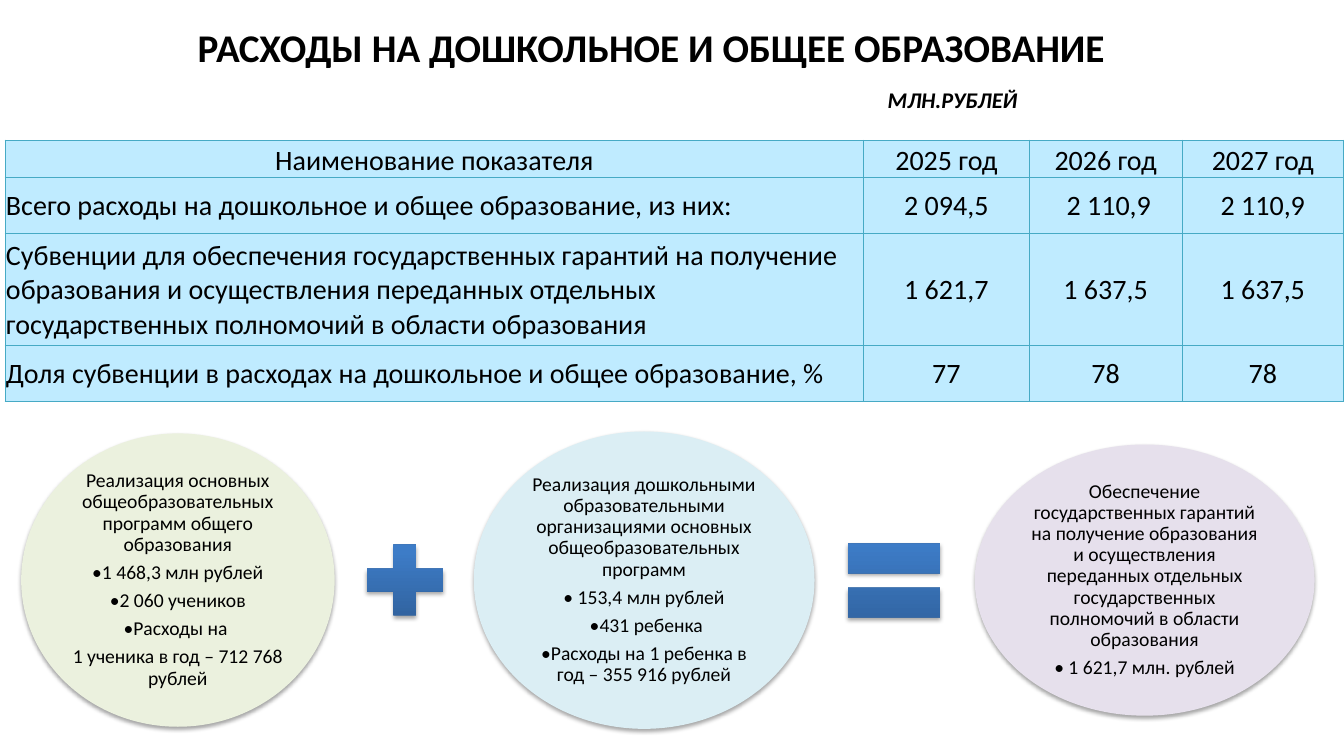
from lxml import etree
from pptx import Presentation
from pptx.dml.color import RGBColor
from pptx.enum.shapes import MSO_SHAPE
from pptx.enum.text import MSO_ANCHOR, MSO_AUTO_SIZE, PP_ALIGN
from pptx.oxml import parse_xml
from pptx.util import Pt

LEFT, CENTER = PP_ALIGN.LEFT, PP_ALIGN.CENTER
MIDDLE, BOTTOM = MSO_ANCHOR.MIDDLE, MSO_ANCHOR.BOTTOM
OVAL, PLUS, EQUAL = MSO_SHAPE.OVAL, MSO_SHAPE.MATH_PLUS, MSO_SHAPE.MATH_EQUAL
NS = "http://schemas.openxmlformats.org/drawingml/2006/main"
FONT = "Calibri"
COLORS = {
    "text": "000000", "cell": "BFEBFF", "border": "46AAC5",
    "green": "EBF1DE", "aqua": "DBEEF4", "lilac": "E6E0EC",
    "sign_dark": "2F5F99", "sign_light": "3D7CC7",
}

TITLE = "РАСХОДЫ НА ДОШКОЛЬНОЕ И ОБЩЕЕ ОБРАЗОВАНИЕ"
UNIT = "МЛН.РУБЛЕЙ"
ROWS = [
    ("Наименование показателя", "2025 год", "2026 год", "2027 год"),
    ("Всего расходы на дошкольное и общее образование, из них:",
     "2 094,5", " 2 110,9", "2 110,9"),
    ("Субвенции для обеспечения государственных гарантий на получение образования "
     "и осуществления переданных отдельных государственных полномочий в области образования",
     "1 621,7", "1 637,5", "1 637,5"),
    ("Доля субвенции в расходах на дошкольное и общее образование, %", "77", "78", "78"),
]
COL_WIDTHS = (613.4, 118.1, 109.4, 115.2)
ROW_HEIGHTS = (27, 40, 80, 40)

# Left, top, width, height, fill, paragraphs
CIRCLES = [
    (15.1, 309.6, 223.9, 209.5, "green", [
        "Реализация основных общеобразовательных программ общего образования",
        "•1 468,3 млн рублей",
        "•2 060 учеников",
        "•Расходы на ",
        "1 ученика в год – 712 768 рублей"]),
    (338.4, 308.2, 243.4, 212.4, "aqua", [
        "Реализация дошкольными образовательными организациями основных "
        "общеобразовательных программ",
        "• 153,4 млн рублей",
        " •431 ребенка",
        "•Расходы на 1 ребенка в год – 355 916 рублей"]),
    (696.3, 317.5, 242.7, 193.7, "lilac", [
        "Обеспечение государственных гарантий на получение образования и осуществления "
        "переданных отдельных государственных полномочий в области образования",
        "• 1 621,7 млн. рублей"]),
]
SIGNS = [(PLUS, 252, 380.2, 74.2, 68.4), (EQUAL, 594, 370.1, 89.3, 89.3)]


def rgb(name):
    return RGBColor.from_string(COLORS[name])


def apply(obj, values):
    for name, value in values.items():
        setattr(obj, name, value)


def add_text(p, text, size, align=LEFT, **font):
    p.alignment = align
    r = p.add_run()
    r.text = text
    apply(r.font, {"name": FONT, "size": Pt(size), **font})
    r.font.color.rgb = rgb("text")


def add_shadowed(kind, left, top, width, height):
    """Add a borderless shape with a soft shadow below it."""
    sp = shapes.add_shape(kind, Pt(left), Pt(top), Pt(width), Pt(height))
    sp.line.fill.background()
    return sp


def drop_shadow(sp):
    sp.shadow.inherit = False
    effects = sp._element.spPr.find(f"{{{NS}}}effectLst")
    effects.append(parse_xml(
        f'<a:outerShdw xmlns:a="{NS}" blurRad="{Pt(3.1)}" dist="{Pt(1.8)}" dir="5400000" '
        'rotWithShape="0"><a:srgbClr val="000000"><a:alpha val="35000"/></a:srgbClr>'
        '</a:outerShdw>'))


def add_borders(cell):
    tc_pr = cell._tc.get_or_add_tcPr()
    for i, side in enumerate(("lnL", "lnR", "lnT", "lnB")):
        ln = etree.fromstring(
            f'<a:{side} xmlns:a="{NS}" w="{Pt(0.75)}"><a:solidFill>'
            f'<a:srgbClr val="{COLORS["border"]}"/></a:solidFill></a:{side}>')
        tc_pr.insert(i, ln)


prs = Presentation()
apply(prs, {"slide_width": Pt(960), "slide_height": Pt(540)})
slide = prs.slides.add_slide(prs.slide_layouts[5])
shapes = slide.shapes

title = shapes.title
apply(title, {"left": Pt(133.9), "top": Pt(15.1), "width": Pt(788.4), "height": Pt(72.7)})
tf = title.text_frame
apply(tf, {"vertical_anchor": BOTTOM, "auto_size": MSO_AUTO_SIZE.NONE,
           "word_wrap": True, "margin_bottom": Pt(6.8)})
add_text(tf.paragraphs[0], TITLE, 28, bold=True)
unit = tf.add_paragraph()
add_text(unit, UNIT, 16, bold=True, italic=True)
unit.space_before = Pt(11.5)
unit._p.get_or_add_pPr().set("marL", str(Pt(493)))

for left, top, width, height, color, lines in CIRCLES:
    sp = add_shadowed(OVAL, left, top, width, height)
    sp.fill.solid()
    sp.fill.fore_color.rgb = rgb(color)
    drop_shadow(sp)
    tf = sp.text_frame
    apply(tf, {"word_wrap": True, "vertical_anchor": MIDDLE})
    apply(tf, {f"margin_{side}": Pt(1.4) for side in ("left", "right", "top", "bottom")})
    for i, line in enumerate(lines):
        p = tf.add_paragraph() if i else tf.paragraphs[0]
        add_text(p, line, 14, CENTER)
        apply(p, {"line_spacing": 0.9, "space_after": Pt(5)})

for kind, *box in SIGNS:
    sp = add_shadowed(kind, *box)
    sp.fill.gradient()
    sp.fill.gradient_angle = 90
    stops = zip(sp.fill.gradient_stops, (0, 0.8), ("sign_dark", "sign_light"))
    for stop, position, color in stops:
        stop.position = position
        stop.color.rgb = rgb(color)
    drop_shadow(sp)

table = shapes.add_table(len(ROWS), len(COL_WIDTHS), Pt(3.6), Pt(100),
                         Pt(sum(COL_WIDTHS)), Pt(sum(ROW_HEIGHTS))).table
apply(table, {"first_row": False, "horz_banding": False})
for column, width in zip(table.columns, COL_WIDTHS):
    column.width = Pt(width)
for i, (row, height) in enumerate(zip(table.rows, ROW_HEIGHTS)):
    row.height = Pt(height)
    for j, (cell, text) in enumerate(zip(row.cells, ROWS[i])):
        apply(cell, {"margin_left": Pt(0.7), "margin_right": Pt(0.7), "margin_top": Pt(0.7),
                     "margin_bottom": 0, "vertical_anchor": MIDDLE if i else BOTTOM})
        cell.fill.solid()
        cell.fill.fore_color.rgb = rgb("cell")
        add_borders(cell)
        add_text(cell.text_frame.paragraphs[0], text, 20, LEFT if i and not j else CENTER)

prs.save("out.pptx")
